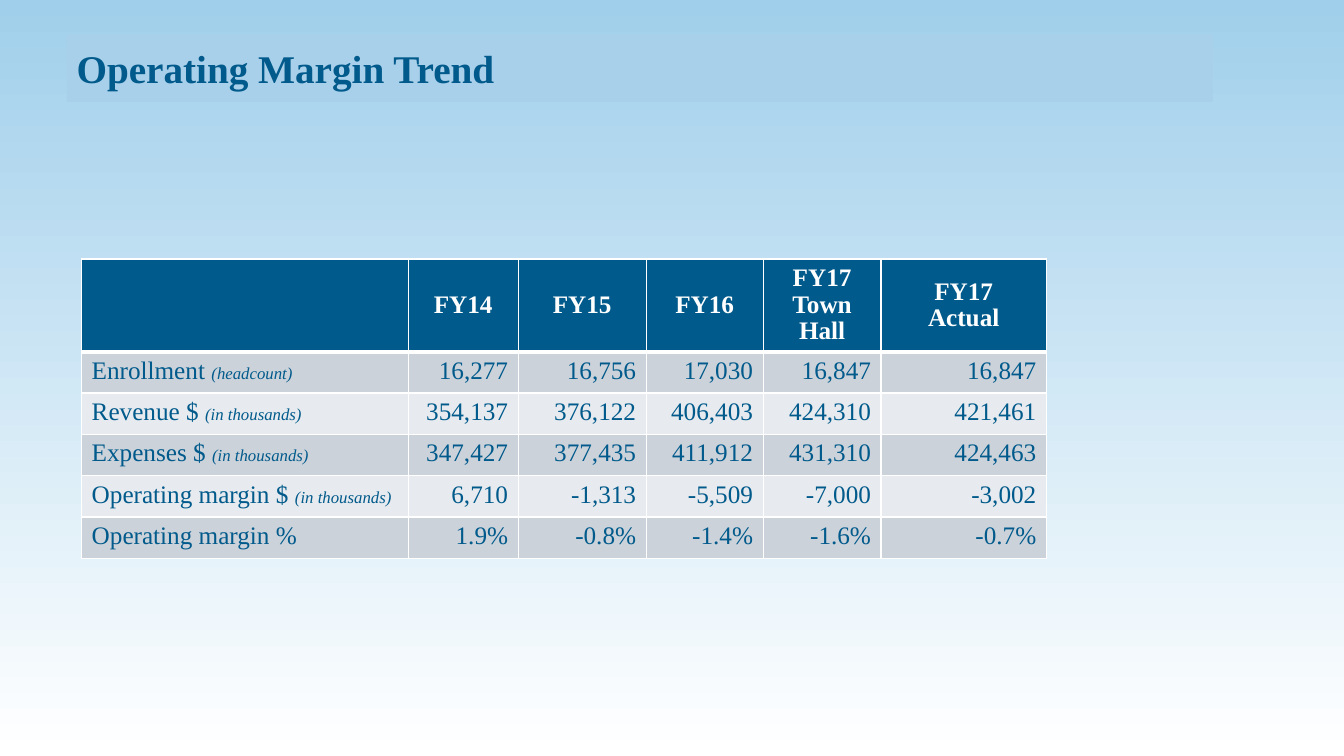
"""Build the operating margin trend slide."""
from dataclasses import dataclass

import lxml.etree
import pptx
import pptx.dml.color
import pptx.enum.text
import pptx.oxml.ns
import pptx.util

Inches = pptx.util.Inches
Pt = pptx.util.Pt
Align = pptx.enum.text.PP_ALIGN
Anchor = pptx.enum.text.MSO_ANCHOR

FONT = "Times New Roman"
COLORS = {
    "sky": "A0CFEB",
    "white": "FFFFFF",
    "title_band": "A9D0EA",
    "navy": "005A8B",
    "dark_row": "CCD2DA",
    "light_row": "E7EAEE",
}


@dataclass
class Measure:
    label: str
    unit: str
    values: list[str]


HEADINGS = ["", "FY14", "FY15", "FY16", "FY17 Town Hall", "FY17\nActual"]
COLUMN_WIDTHS = [3.24, 1.09, 1.27, 1.16, 1.17, 1.64]
HEADER_HEIGHT = 0.92
ROW_HEIGHT = 0.41
MEASURES = [
    Measure("Enrollment ", "(headcount)", ["16,277", "16,756", "17,030", "16,847", "16,847"]),
    Measure("Revenue $ ", "(in thousands)", ["354,137", "376,122", "406,403", "424,310", "421,461"]),
    Measure("Expenses $ ", "(in thousands)", ["347,427", "377,435", "411,912", "431,310", "424,463"]),
    Measure("Operating margin $ ", "(in thousands)", ["6,710", "-1,313", "-5,509", "-7,000", "-3,002"]),
    Measure("Operating margin %", "", ["1.9%", "-0.8%", "-1.4%", "-1.6%", "-0.7%"]),
]


def rgb(name: str) -> pptx.dml.color.RGBColor:
    return pptx.dml.color.RGBColor.from_string(COLORS[name])


def style_font(font, size: float, color: str, bold: bool = False) -> None:
    font.name = FONT
    font.size = Pt(size)
    font.bold = bold
    font.color.rgb = rgb(color)


def paint_background(page) -> None:
    fill = page.background.fill
    fill.gradient()
    fill.gradient_angle = 270
    for stop, position, color in zip(fill.gradient_stops, (0, 1), ("sky", "white")):
        stop.position = position
        stop.color.rgb = rgb(color)


def add_title(page, text: str) -> None:
    title = page.shapes.title
    title.left, title.top = Inches(0.66), Inches(0.34)
    title.width, title.height = Inches(11.37), Inches(0.67)
    title.fill.solid()
    title.fill.fore_color.rgb = rgb("title_band")
    title.text_frame.text = text
    title.text_frame.vertical_anchor = Anchor.MIDDLE
    para = title.text_frame.paragraphs[0]
    para.alignment = Align.LEFT
    style_font(para.font, 28, "navy", bold=True)


def format_cell(cell, fill: str, top: float = 1, bottom: float = 1) -> None:
    properties = cell._tc.get_or_add_tcPr()
    qn = pptx.oxml.ns.qn
    for side, width in (("L", 1), ("R", 1), ("T", top), ("B", bottom)):
        line = lxml.etree.SubElement(properties, qn(f"a:ln{side}"), w=str(Pt(width)))
        solid = lxml.etree.SubElement(line, qn("a:solidFill"))
        lxml.etree.SubElement(solid, qn("a:srgbClr"), val=COLORS["white"])
    cell.fill.solid()
    cell.fill.fore_color.rgb = rgb(fill)


def fill_header(cell, heading: str) -> None:
    format_cell(cell, "navy", bottom=3)
    cell.vertical_anchor = Anchor.MIDDLE
    cell.text_frame.text = heading
    for para in cell.text_frame.paragraphs:
        para.alignment = Align.CENTER
        para.line_spacing = 0.95
        style_font(para.font, 18, "white", bold=True)


def fill_measure(cells: list, measure: Measure, fill: str, top: float) -> None:
    for cell, text in zip(cells, [measure.label, *measure.values]):
        format_cell(cell, fill, top=top)
        cell.text_frame.text = text
        para = cell.text_frame.paragraphs[0]
        para.alignment = Align.RIGHT
        style_font(para.font, 18, "navy")
    para = cells[0].text_frame.paragraphs[0]
    para.alignment = Align.LEFT
    if measure.unit:
        span = para.add_run()
        span.text = measure.unit
        span.font.size = Pt(12)
        span.font.italic = True


def add_margin_table(page) -> None:
    height = HEADER_HEIGHT + ROW_HEIGHT * len(MEASURES)
    frame = page.shapes.add_table(
        len(MEASURES) + 1, len(HEADINGS), Inches(0.81), Inches(2.57),
        Inches(sum(COLUMN_WIDTHS)), Inches(height))
    table = frame.table
    for column, width in zip(table.columns, COLUMN_WIDTHS):
        column.width = Inches(width)
    for index, row in enumerate(table.rows):
        row.height = Inches(ROW_HEIGHT if index else HEADER_HEIGHT)
    for cell, heading in zip(table.rows[0].cells, HEADINGS):
        fill_header(cell, heading)
    for index, measure in enumerate(MEASURES):
        fill = "light_row" if index % 2 else "dark_row"
        top = 1 if index else 3
        fill_measure(list(table.rows[index + 1].cells), measure, fill, top)


def main() -> None:
    deck = pptx.Presentation()
    deck.slide_width, deck.slide_height = Inches(13.33), Inches(7.5)
    page = deck.slides.add_slide(deck.slide_layouts.get_by_name("Title Only"))
    paint_background(page)
    add_title(page, "Operating Margin Trend")
    add_margin_table(page)
    deck.save("out.pptx")


if __name__ == "__main__":
    main()
